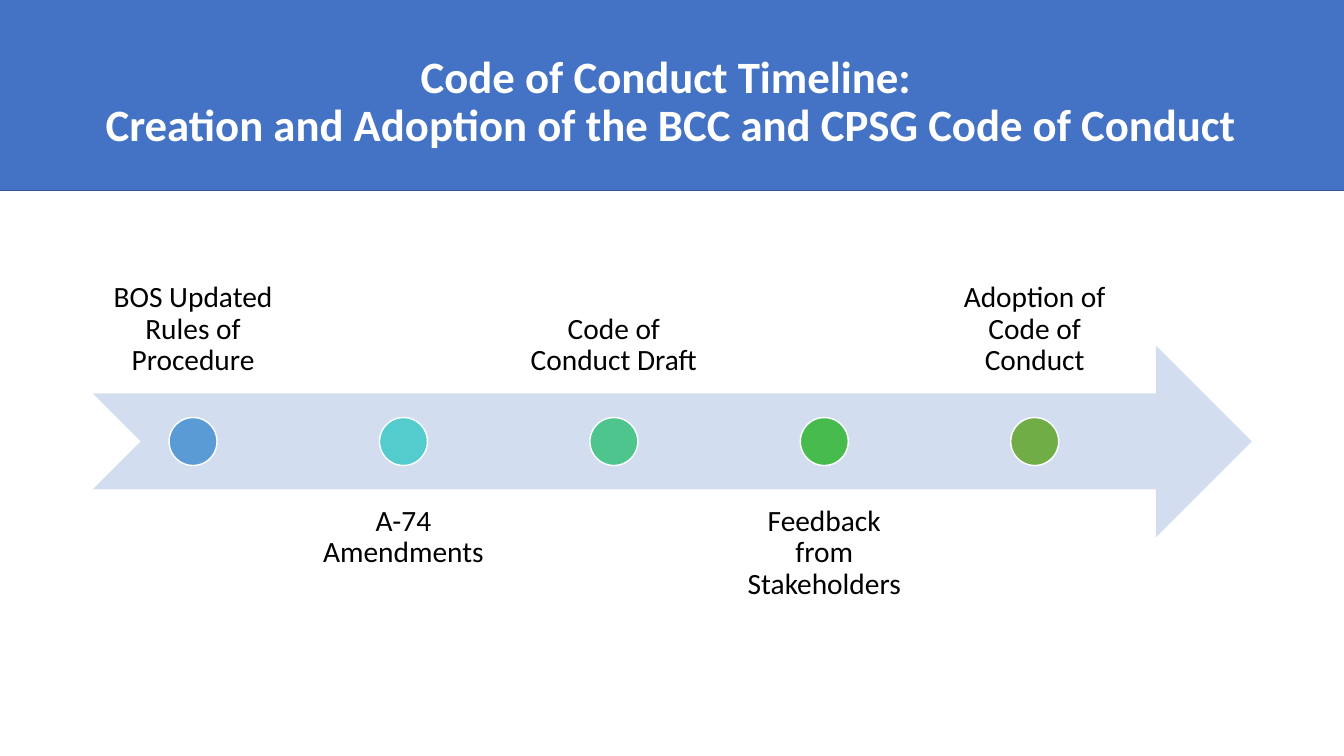
from pptx import Presentation
from pptx.dml.color import RGBColor
from pptx.enum import shapes, text
from pptx.util import Cm, Pt

STEPS = [
    ("BOS Updated Rules of Procedure", "5B9BD5"),
    ("A-74 Amendments", "54CCCD"),
    ("Code of Conduct Draft", "4DC58D"),
    ("Feedback from Stakeholders", "48BB4F"),
    ("Adoption of Code of Conduct", "70AD47"),
]


def tint(hue):
    """Turn a hex string into a colour."""
    return RGBColor.from_string(hue)


def write(frame, words, size=21, hue="000000", bold=False, anchor="TOP", inset=None):
    """Fill a text frame with one centred, formatted paragraph."""
    frame.word_wrap = True
    frame.auto_size = text.MSO_AUTO_SIZE.NONE
    frame.vertical_anchor = text.MSO_ANCHOR[anchor]
    if inset is not None:
        frame.margin_left = frame.margin_right = Cm(inset)
        frame.margin_top = frame.margin_bottom = Cm(inset)
    para = frame.paragraphs[0]
    para.text = words
    para.alignment = text.PP_ALIGN.CENTER
    para.line_spacing = 0.9
    for run in para.runs:
        font = run.font
        font.name, font.size, font.bold = "Calibri", Pt(size), bold
        font.color.rgb = tint(hue)


def draw(slide, kind, box, fill, line=None):
    """Add a flat preset shape in a box given in centimetres."""
    shape = slide.shapes.add_shape(kind, *map(Cm, box))
    shape.shadow.inherit = False
    shape.fill.solid()
    shape.fill.fore_color.rgb = tint(fill)
    if line:
        shape.line.color.rgb = tint(line)
        shape.line.width = Pt(1)
    else:
        shape.line.fill.background()


def header(slide, box):
    """Place the blue band and the title on it."""
    left, top, wide, high = box
    draw(slide, shapes.MSO_SHAPE.RECTANGLE, box, "4472C4", "325491")
    title = slide.shapes.title
    title.left, title.top = Cm(left + 3.86), Cm(top + 1.3)
    title.width, title.height = Cm(wide - 7.75), Cm(high - 1.93)
    write(title.text_frame,
          "Code of Conduct Timeline: \vCreation and Adoption of the BCC and CPSG Code of Conduct",
          size=32, hue="FFFFFF", bold=True, anchor="MIDDLE")
    title.element.getparent().append(title.element)


def timeline(slide, box):
    """Place the arrow, its dots and the labels above and below in turn."""
    left, top, wide, high = box
    band, dot = 0.4 * high, 0.1 * high
    span = 5.05
    draw(slide, shapes.MSO_SHAPE.NOTCHED_RIGHT_ARROW,
         (left, top + 0.3 * high, wide, band), "D2DEEF")
    for step, (words, hue) in enumerate(STEPS):
        x = left + step * span * 1.05
        low = step % 2
        y = top + low * (high - band)
        label = slide.shapes.add_textbox(*map(Cm, (x, y, span, band)))
        write(label.text_frame, words, anchor="TOP" if low else "BOTTOM", inset=0.41)
        draw(slide, shapes.MSO_SHAPE.OVAL,
             (x + (span - dot) / 2, top + (high - dot) / 2, dot, dot), hue, "FFFFFF")


def main():
    """Build and save the slide."""
    deck = Presentation()
    deck.slide_width, deck.slide_height = Cm(33.87), Cm(19.05)
    slide = deck.slides.add_slide(deck.slide_layouts[5])
    timeline(slide, (2.34, 5.08, 29.21, 12.09))
    header(slide, (-1.55, -0.28, 36.96, 5.08))
    deck.save("out.pptx")


if __name__ == "__main__":
    main()
